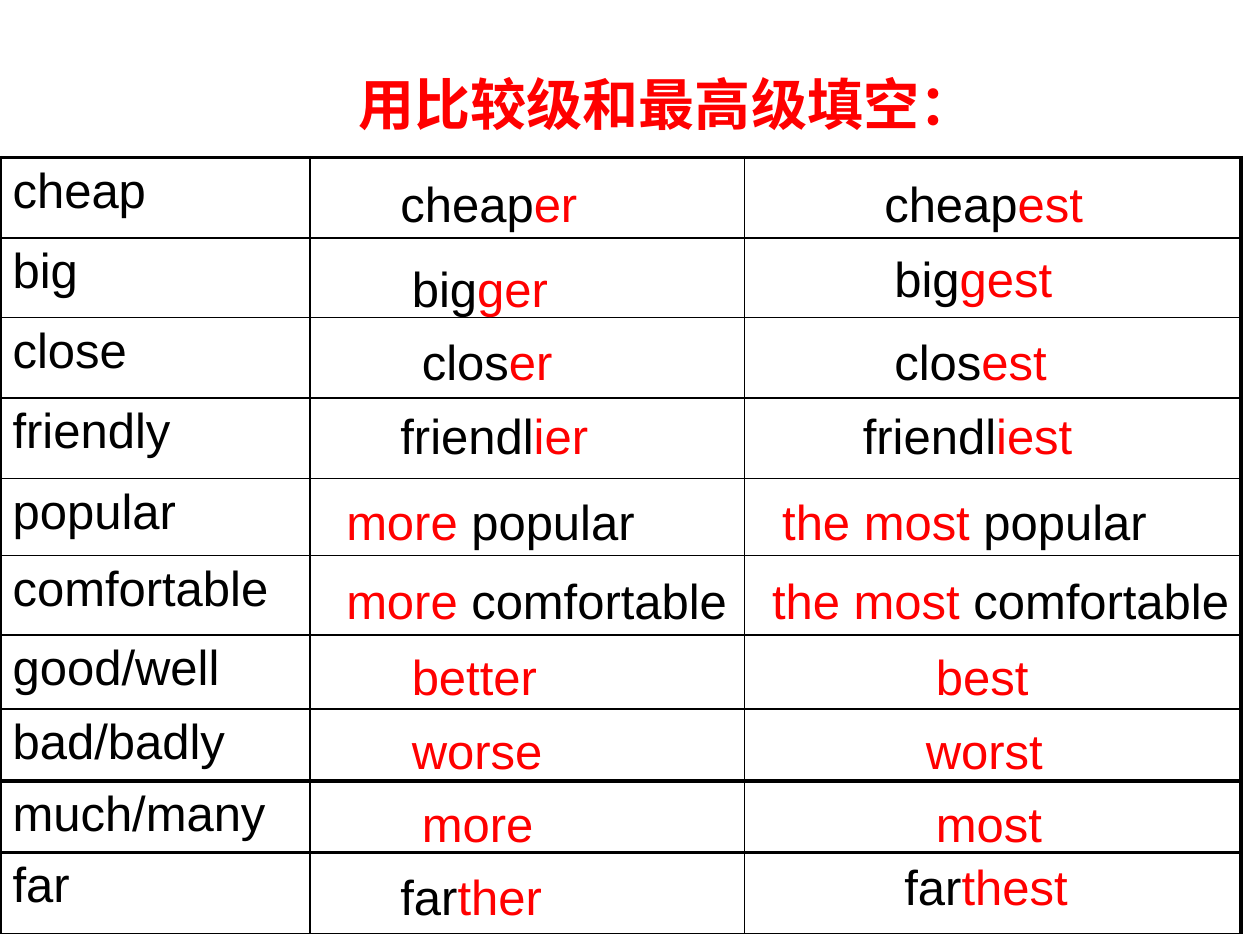
from typing import NamedTuple

from lxml import etree
from pptx import Presentation
from pptx.dml.color import RGBColor
from pptx.enum import text as txt
from pptx.oxml import ns
from pptx.util import Inches, Pt

BLACK, RED = "000000", "FF0000"
THIN, THICK = 1, 2.25
COLS = (2.46, 3.45, 3.94)


class Grid(NamedTuple):
    top: float
    rows: tuple[float, ...]
    words: tuple[str, ...]
    upper: float  # top edge, points
    lower: float  # bottom edge, points


class Answer(NamedTuple):
    left: float
    top: float
    width: float
    lead: str = ""  # red
    stem: str = ""  # black
    end: str = ""  # red


GRIDS = (
    Grid(1.25, (0.64, 0.63, 0.64, 0.64, 0.61, 0.63, 0.59, 0.57),
         ("cheap", "big", "close", "friendly", "popular", "comfortable",
          "good/well", "bad/badly"), THICK, THICK),
    Grid(6.2, (0.57,), ("much/many",), THICK, THIN),
    Grid(6.76, (0.65,), ("far",), THIN, THIN),
)

ANSWERS = (
    Answer(3.08, 1.33, 1.61, stem="cheap", end="er"),
    Answer(6.92, 1.33, 1.78, stem="cheap", end="est"),
    Answer(3.17, 2, 1.28, stem="big", end="ger"),
    Answer(7, 1.92, 1.46, stem="big", end="gest"),
    Answer(3.25, 2.58, 1.24, stem="clos", end="er"),
    Answer(7, 2.58, 1.41, stem="clos", end="est"),
    Answer(3.08, 3.17, 1.7, stem="friendl", end="ier"),
    Answer(6.75, 3.17, 1.87, stem="friendl", end="iest"),
    Answer(2.65, 3.85, 2.5, "more ", "popular"),
    Answer(6.11, 3.85, 3.1, "the most ", "popular"),
    Answer(2.65, 4.48, 3.23, "more ", "comfortable"),
    Answer(6.03, 4.48, 3.84, "the most ", "comfortable"),
    Answer(3.17, 5.08, 1.2, "better"),
    Answer(7.33, 5.08, 0.94, "best"),
    Answer(3.17, 5.67, 1.24, "worse"),
    Answer(7.25, 5.67, 1.13, "worst"),
    Answer(3.25, 6.25, 1.09, "more"),
    Answer(7.33, 6.25, 1.04, "most"),
    Answer(3.08, 6.83, 1.33, stem="far", end="ther"),
    Answer(7.08, 6.75, 1.5, stem="far", end="thest"),
)


def paint(code: str) -> RGBColor:
    return RGBColor.from_string(code)


def write(frame, words: str, *, size: float = 28, color: str = BLACK,
          bold: bool = False) -> None:
    run = frame.paragraphs[0].add_run()
    run.text = words
    run.font.name = "Arial"
    run.font.size = Pt(size)
    run.font.bold = bold
    run.font.color.rgb = paint(color)


def add_box(slide, left: float, top: float, width: float, height: float,
            wrap: bool = False):
    box = slide.shapes.add_textbox(
        Inches(left), Inches(top), Inches(width), Inches(height))
    frame = box.text_frame
    frame.word_wrap = wrap
    frame.auto_size = txt.MSO_AUTO_SIZE.SHAPE_TO_FIT_TEXT
    return frame


def edge(cell, side: str, width: float) -> None:
    props = cell._tc.get_or_add_tcPr()
    line = etree.SubElement(props, ns.qn(f"a:ln{side}"), w=str(Pt(width)))
    fill = etree.SubElement(line, ns.qn("a:solidFill"))
    etree.SubElement(fill, ns.qn("a:srgbClr"), val=BLACK)


def draw_grid(slide, grid: Grid) -> None:
    count = len(grid.rows)
    table = slide.shapes.add_table(
        count, len(COLS), Inches(0), Inches(grid.top),
        Inches(sum(COLS)), Inches(sum(grid.rows))).table
    table.first_row = table.horz_banding = False
    for col, width in zip(table.columns, COLS):
        col.width = Inches(width)
    for r, (height, word) in enumerate(zip(grid.rows, grid.words)):
        table.rows[r].height = Inches(height)
        for c in range(len(COLS)):
            cell = table.cell(r, c)
            edge(cell, "L", THICK if c == 0 else THIN)
            edge(cell, "R", THICK if c == len(COLS) - 1 else THIN)
            edge(cell, "T", grid.upper if r == 0 else THIN)
            edge(cell, "B", grid.lower if r == count - 1 else THIN)
            cell.fill.background()
        write(table.cell(r, 0).text_frame, word)


def draw_answer(slide, item: Answer) -> None:
    frame = add_box(slide, item.left, item.top, item.width, 0.57)
    for part, color in ((item.lead, RED), (item.stem, BLACK), (item.end, RED)):
        if part:
            write(frame, part, color=color)


def main() -> None:
    deck = Presentation()
    deck.slide_width, deck.slide_height = Inches(10), Inches(7.5)
    slide = deck.slides.add_slide(deck.slide_layouts[6])

    # Word tables
    for grid in GRIDS:
        draw_grid(slide, grid)

    # Title
    title = add_box(slide, 2.75, 0.5, 5.1, 0.63, wrap=True)
    write(title, "用比较级和最高级填空：", size=32, color=RED, bold=True)

    # Comparatives and superlatives
    for item in ANSWERS:
        draw_answer(slide, item)

    deck.save("out.pptx")


if __name__ == "__main__":
    main()
